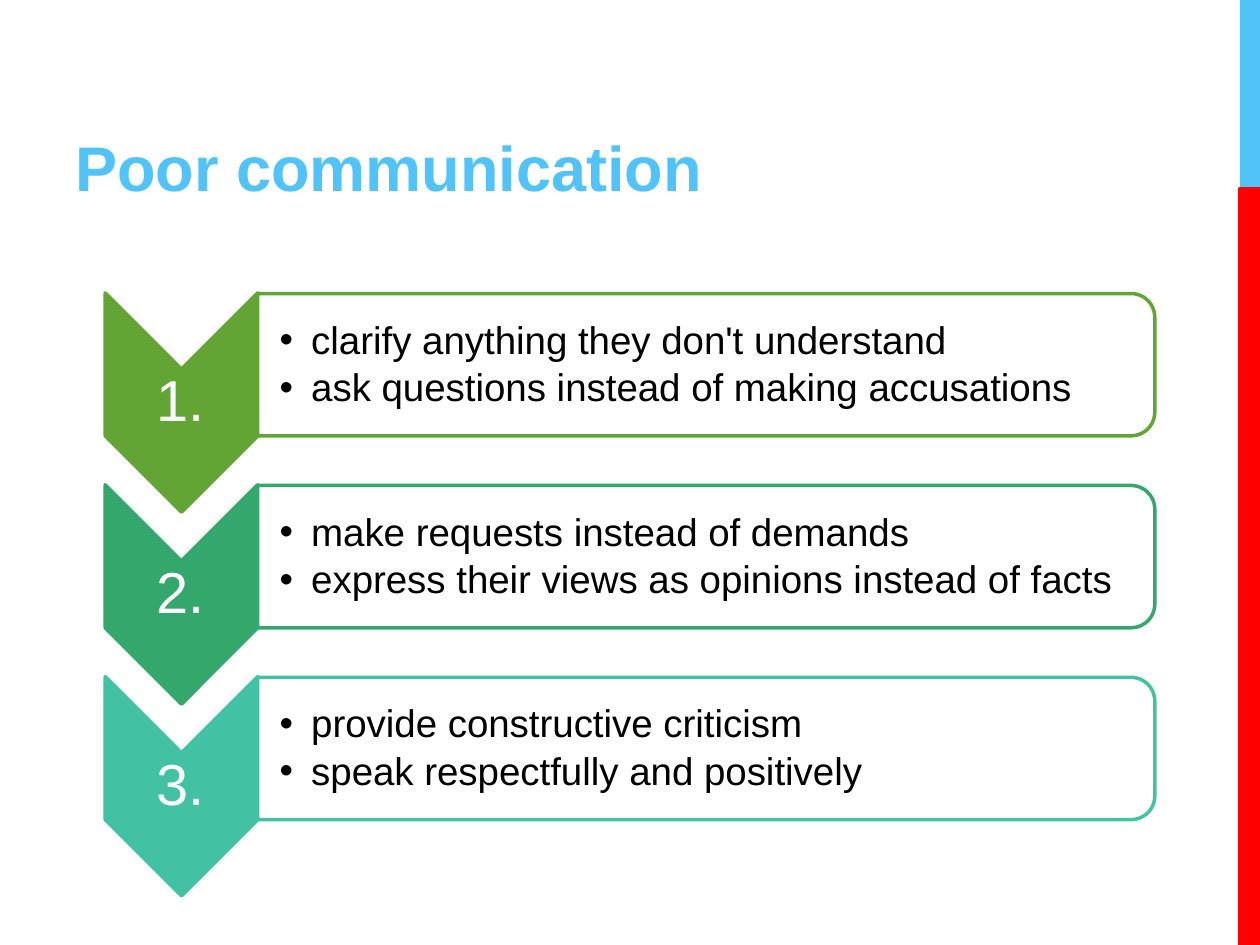
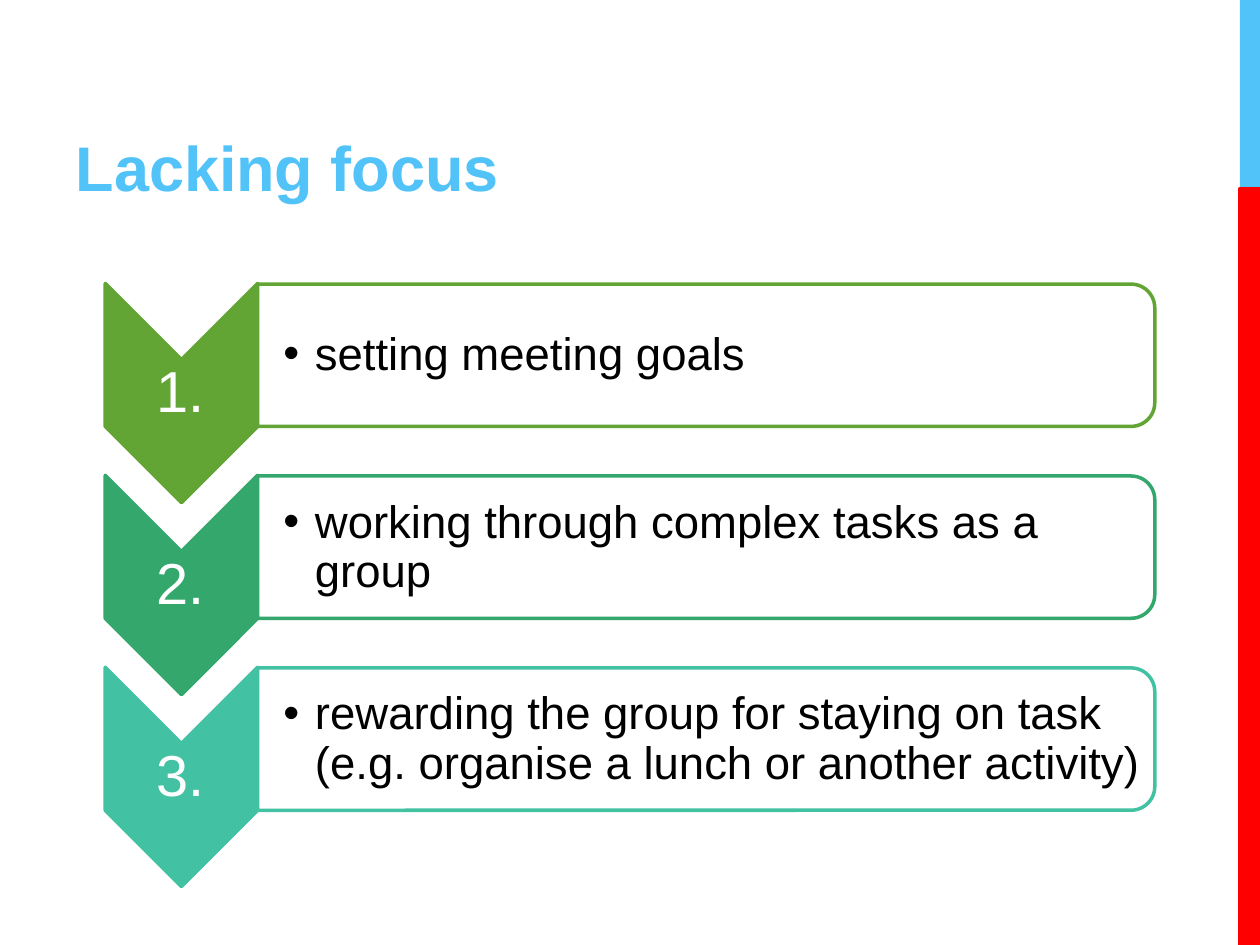
from lxml.etree import SubElement as Sub
from pptx import Presentation
from pptx.dml.color import RGBColor as Rgb
from pptx.enum.shapes import MSO_SHAPE as Kind
from pptx.enum.text import MSO_ANCHOR as Anchor, MSO_AUTO_SIZE as Fit, PP_ALIGN as Align
from pptx.oxml.ns import qn
from pptx.util import Inches, Pt

INK = {
    "sky": "51C3F9", "red": "FF0000", "white": "FFFFFF", "black": "000000",
    "leaf": "62A534", "pine": "34A76C", "mint": "43C1A3",
}
STEPS = ["leaf", "pine", "mint"]
COLS, ROWS = 100, 75
PITCH = 15.23
EDGE, BAR = 98.4, 1.6
TALKS = [
    {
        "title": "Poor communication", "top": 23.25, "size": 22, "pad": 0.17,
        "lists": [
            ["clarify anything they don't understand",
             "ask questions instead of making accusations"],
            ["make requests instead of demands",
             "express their views as opinions instead of facts"],
            ["provide constructive criticism",
             "speak respectfully and positively"],
        ],
    },
    {
        "title": "Lacking focus", "top": 22.5, "size": 26, "pad": 0.2,
        "lists": [
            ["setting meeting goals"],
            ["working through complex tasks as a group"],
            ["rewarding the group for staying on task "
             "(e.g. organise a lunch or another activity)"],
        ],
    },
]


class Deck:
    face = "Arial"

    def __init__(self):
        self.prs = Presentation()
        self.prs.slide_width, self.prs.slide_height = Inches(10), Inches(7.5)
        self.slide = None

    def area(self, x, y, w, h):
        col, row = self.prs.slide_width / COLS, self.prs.slide_height / ROWS
        return [round(n) for n in (x * col, y * row, w * col, h * row)]

    def style(self, para, size, ink, bold=False):
        for run in para.runs:
            font = run.font
            font.name, font.size, font.bold = self.face, Pt(size), bold
            font.color.rgb = Rgb.from_string(INK[ink])

    def start(self, title):
        self.slide = self.prs.slides.add_slide(self.prs.slide_layouts[5])
        self.shape(Kind.RECTANGLE, (EDGE, 0, BAR, 15), "sky")
        self.shape(Kind.RECTANGLE, (EDGE, 15, BAR, 60), "red", "red", 2.25)
        head = self.slide.shapes.title
        head.left, head.top, head.width, head.height = self.area(5, 1.7, 70.2, 15)
        frame = head.text_frame
        frame.text = title
        frame.auto_size = Fit.NONE
        frame.vertical_anchor = Anchor.BOTTOM
        frame.paragraphs[0].alignment = Align.LEFT
        self.style(frame.paragraphs[0], 36, "sky", True)

    def shape(self, kind, grid, fill, line=None, width=2.0, adj=(), turn=False):
        x, y, w, h = grid
        if turn:
            x, y, w, h = x + (w - h) / 2, y + (h - w) / 2, h, w
        item = self.slide.shapes.add_shape(kind, *self.area(x, y, w, h))
        item.rotation = 90 if turn else 0
        item.shadow.inherit = False
        for i, part in enumerate(adj):
            item.adjustments[i] = part
        item.fill.solid()
        item.fill.fore_color.rgb = Rgb.from_string(INK[fill])
        if line:
            item.line.color.rgb = Rgb.from_string(INK[line])
            item.line.width = Pt(width)
        else:
            item.line.fill.background()
        return item

    def text(self, grid, lines, size, ink, pad=0.02, dots=False):
        frame = self.slide.shapes.add_textbox(*self.area(*grid)).text_frame
        frame.word_wrap = True
        frame.vertical_anchor = Anchor.MIDDLE
        frame.margin_left = Inches(pad)
        frame.margin_right = frame.margin_top = frame.margin_bottom = Inches(0.02)
        frame.text = "\n".join(lines)
        for i, para in enumerate(frame.paragraphs):
            para.line_spacing = 0.9
            para.alignment = Align.LEFT if dots else Align.CENTER
            if i:
                para.space_before = Pt(3.3)
            if dots:
                self.dot(para)
            self.style(para, size, ink)

    def dot(self, para):
        props = para._p.get_or_add_pPr()
        props.set("marL", str(Inches(0.25)))
        props.set("indent", str(Inches(-0.25)))
        Sub(props, qn("a:buFont"), typeface=self.face)
        Sub(props, qn("a:buChar"), char="•")

    def step(self, num, top, ink, lines, size, pad):
        self.shape(Kind.CHEVRON, (8.35, top, 12.1, 17.4), ink, ink,
                   adj=[0.5], turn=True)
        self.text((8.3, top + 6.15, 12.1, 5.2), [f"{num}."], 33, "white")
        card = self.shape(Kind.ROUND_2_SAME_RECTANGLE, (20.45, top + 0.05, 71.2, 11.3),
                          "white", ink, adj=[0.167, 0], turn=True)
        tint = card.element.spPr.find(qn("a:solidFill"))[0]
        Sub(tint, qn("a:alpha"), val="90000")
        self.text((20.5, top + 0.65, 70.6, 10.2), lines, size, "black", pad, True)

    def talk(self, title, top, size, pad, lists):
        self.start(title)
        for i, (ink, lines) in enumerate(zip(STEPS, lists)):
            self.step(i + 1, top + i * PITCH, ink, lines, size, pad)


def main():
    deck = Deck()
    for talk in TALKS:
        deck.talk(**talk)
    deck.prs.save("out.pptx")


if __name__ == "__main__":
    main()
